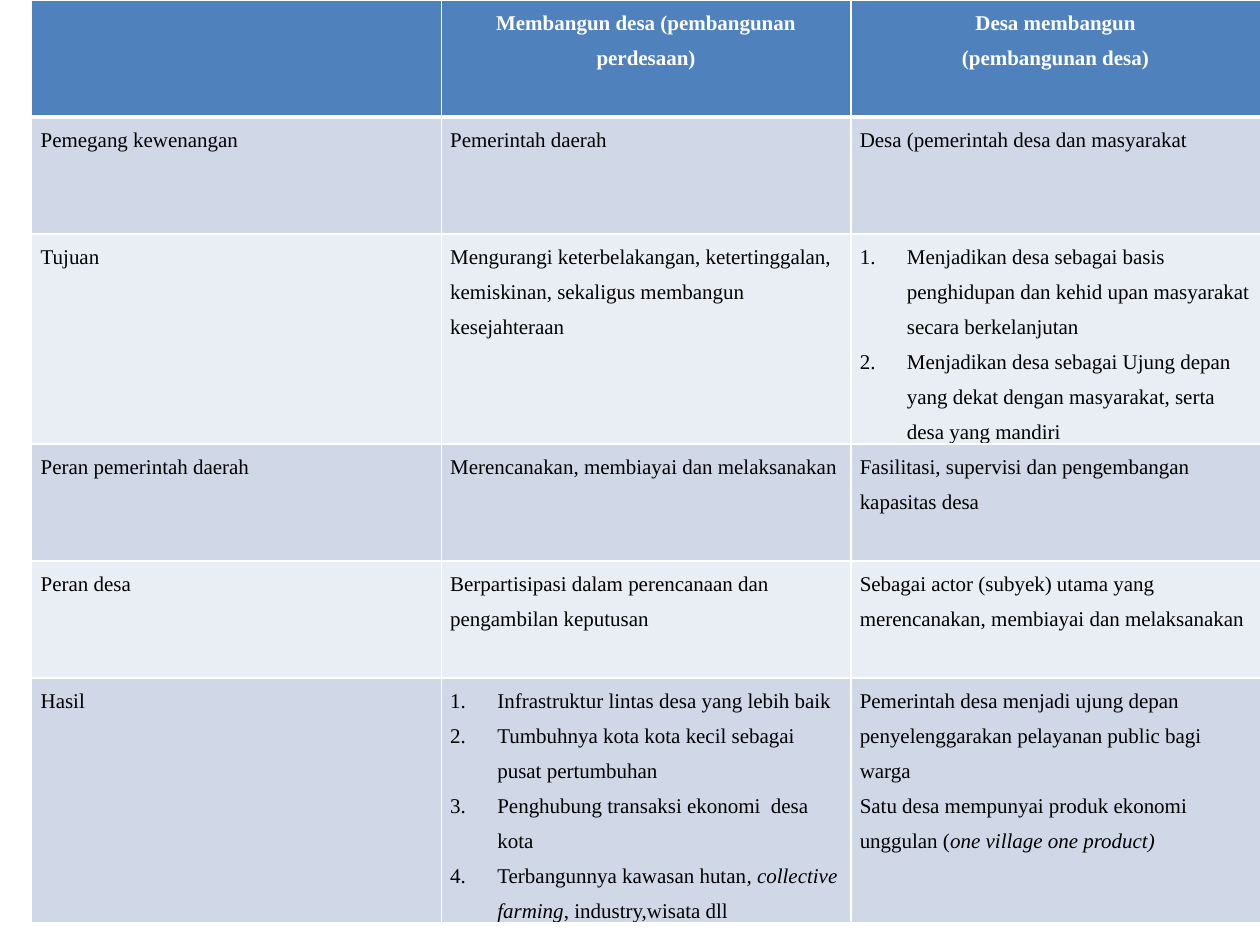
from dataclasses import dataclass

from lxml.etree import SubElement
from pptx import Presentation
from pptx.dml.color import RGBColor
from pptx.enum.text import PP_ALIGN
from pptx.oxml.ns import qn
from pptx.table import _Cell
from pptx.util import Cm, Pt

WHITE = RGBColor(0xFF, 0xFF, 0xFF)
BLACK = RGBColor(0x00, 0x00, 0x00)
HEADER_BLUE = RGBColor(0x4F, 0x81, 0xBD)
BAND_DARK = RGBColor(0xD0, 0xD8, 0xE8)
BAND_LIGHT = RGBColor(0xE9, 0xED, 0xF4)
FONT = "Times New Roman"
INDENT = Cm(0.95)


@dataclass(frozen=True)
class Entry:
    """Paragraphs of one cell; text between asterisks is italic."""
    lines: tuple[str, ...]
    numbered: bool = False


@dataclass(frozen=True)
class Row:
    """One table row with its height in centimetres."""
    height: float
    entries: tuple[Entry, Entry, Entry]


ROWS = (
    Row(2.36, (
        Entry(()),
        Entry(("Membangun desa (pembangunan perdesaan)",)),
        Entry(("Desa membangun", "(pembangunan desa)")),
    )),
    Row(2.36, (
        Entry(("Pemegang kewenangan",)),
        Entry(("Pemerintah daerah",)),
        Entry(("Desa (pemerintah desa dan masyarakat",)),
    )),
    Row(3.86, (
        Entry(("Tujuan",)),
        Entry(("Mengurangi keterbelakangan, ketertinggalan, kemiskinan, "
               "sekaligus membangun kesejahteraan",)),
        Entry(("Menjadikan desa sebagai basis penghidupan dan kehid upan "
               "masyarakat secara berkelanjutan",
               "Menjadikan desa sebagai Ujung depan yang dekat dengan "
               "masyarakat, serta desa yang mandiri"), numbered=True),
    )),
    Row(2.36, (
        Entry(("Peran pemerintah daerah",)),
        Entry(("Merencanakan, membiayai dan melaksanakan",)),
        Entry(("Fasilitasi, supervisi dan pengembangan kapasitas desa",)),
    )),
    Row(2.36, (
        Entry(("Peran desa",)),
        Entry(("Berpartisipasi dalam perencanaan dan pengambilan keputusan",)),
        Entry(("Sebagai actor (subyek) utama yang merencanakan, membiayai "
               "dan melaksanakan",)),
    )),
    Row(4.5, (
        Entry(("Hasil",)),
        Entry(("Infrastruktur lintas desa yang lebih baik",
               "Tumbuhnya kota kota kecil sebagai pusat pertumbuhan",
               "Penghubung transaksi ekonomi  desa kota",
               "Terbangunnya kawasan hutan*, collective farming*, "
               "industry,wisata dll"), numbered=True),
        Entry(("Pemerintah desa menjadi ujung depan penyelenggarakan "
               "pelayanan public bagi warga",
               "Satu desa mempunyai produk ekonomi unggulan "
               "(*one village one product)*")),
    )),
)


def set_borders(cell: _Cell, header: bool) -> None:
    """Draw white cell borders, with a heavier rule under the header."""
    tc_pr = cell._tc.get_or_add_tcPr()
    for side in "LRTB":
        width = Pt(3) if header and side == "B" else Pt(1)
        ln = SubElement(tc_pr, qn(f"a:ln{side}"), w=str(width))
        fill = SubElement(ln, qn("a:solidFill"))
        SubElement(fill, qn("a:srgbClr"), val=str(WHITE))


def fill_cell(cell: _Cell, entry: Entry, color: RGBColor, header: bool) -> None:
    """Style one cell and write its paragraphs."""
    set_borders(cell, header)
    cell.fill.solid()
    cell.fill.fore_color.rgb = color
    cell.margin_left = cell.margin_right = Cm(0.18)
    cell.margin_top = cell.margin_bottom = 0
    tf = cell.text_frame
    tf.text = "\n".join(entry.lines)
    for p, line in zip(tf.paragraphs, entry.lines):
        p.line_spacing = 1.5
        p.alignment = PP_ALIGN.CENTER if header else PP_ALIGN.LEFT
        if entry.numbered:
            p_pr = p._p.get_or_add_pPr()
            p_pr.set("marL", str(INDENT))
            p_pr.set("indent", str(-INDENT))
            SubElement(p_pr, qn("a:buFont"), typeface="+mj-lt")
            SubElement(p_pr, qn("a:buAutoNum"), type="arabicPeriod")
        p.clear()
        for i, piece in enumerate(filter(None, line.split("*"))):
            r = p.add_run()
            r.text = piece
            r.font.name = FONT
            r.font.size = Pt(12)
            r.font.bold = header
            r.font.italic = i % 2 == 1
            r.font.color.rgb = WHITE if header else BLACK


def main() -> None:
    """Build the comparison table slide."""
    prs = Presentation()
    prs.slide_width, prs.slide_height = Cm(25.4), Cm(19.05)
    s = prs.slides.add_slide(prs.slide_layouts[6])
    height = sum(row.height for row in ROWS)
    table = s.shapes.add_table(
        len(ROWS), 3, Cm(0.64), 0, Cm(24.77), Cm(height)).table
    for i, row in enumerate(ROWS):
        table.rows[i].height = Cm(row.height)
        band = BAND_DARK if i % 2 else BAND_LIGHT
        color = band if i else HEADER_BLUE
        for j, entry in enumerate(row.entries):
            fill_cell(table.cell(i, j), entry, color, header=i == 0)
    prs.save("out.pptx")


if __name__ == "__main__":
    main()
